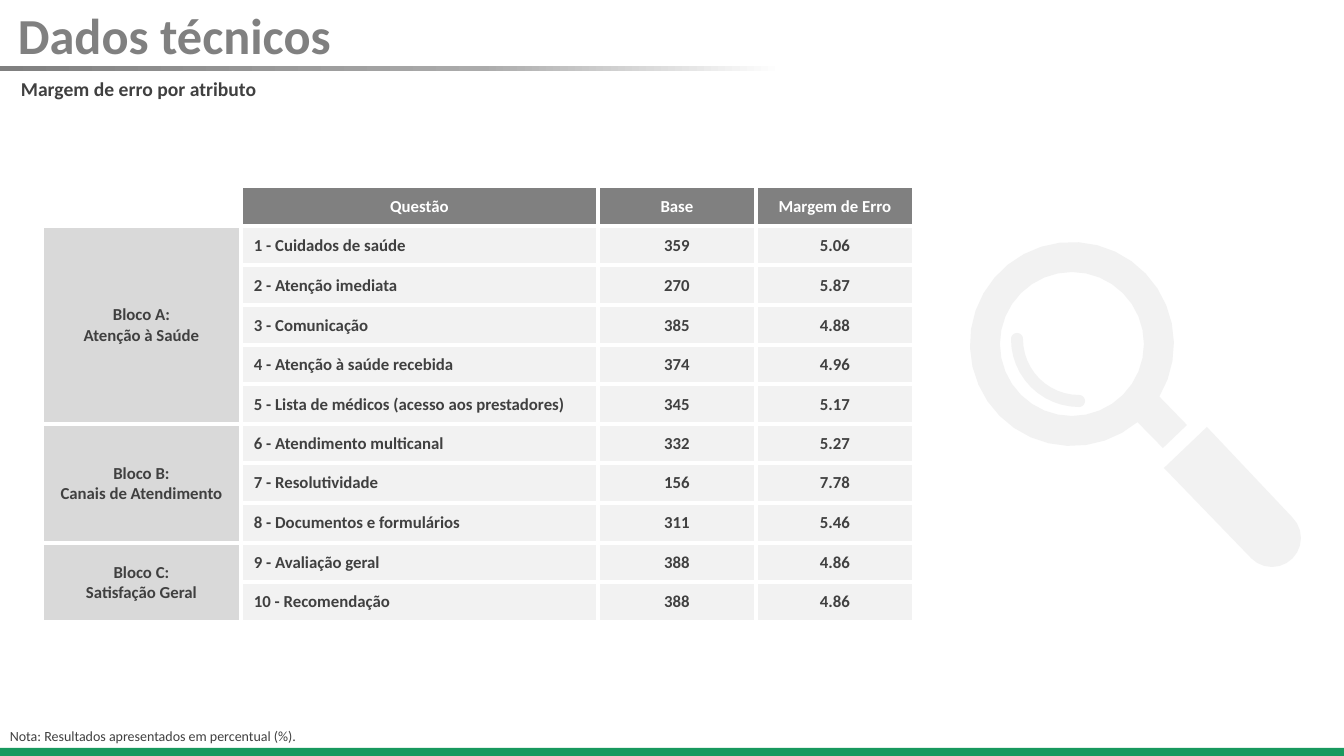
"""Build the slide with the margin of error of each survey attribute."""
from itertools import pairwise
from math import cos, radians, sin
from typing import Any, NamedTuple

from lxml.etree import SubElement
from pptx import Presentation
from pptx.dml.color import RGBColor
from pptx.enum.shapes import MSO_SHAPE
from pptx.enum.text import MSO_ANCHOR, MSO_AUTO_SIZE, PP_ALIGN
from pptx.oxml.ns import qn
from pptx.shapes.autoshape import Shape
from pptx.slide import Slide
from pptx.table import _Cell
from pptx.util import Emu, Pt

EMU_PER_PX = 914400 / 100.8
COLORS = {
    "gray": "808080",
    "silver": "ABABAB",
    "block": "D9D9D9",
    "light": "F2F2F2",
    "dark": "404040",
    "white": "FFFFFF",
    "green": "18995E",
}
Point = tuple[float, float]


class Block(NamedTuple):
    title: str
    subject: str
    rows: list[tuple[str, str, str]]


class Caption(NamedTuple):
    text: str
    frame: tuple[int, int, int, int]
    size: int
    color: str
    bold: bool
    frame_format: dict[str, Any]
    line_spacing: float | None = None


HEADERS = ("Questão", "Base", "Margem de Erro")
BLOCKS = [
    Block("Bloco A:", "Atenção à Saúde", [
        ("1 - Cuidados de saúde", "359", "5.06"),
        ("2 - Atenção imediata", "270", "5.87"),
        ("3 - Comunicação", "385", "4.88"),
        ("4 - Atenção à saúde recebida", "374", "4.96"),
        ("5 - Lista de médicos (acesso aos prestadores)", "345", "5.17"),
    ]),
    Block("Bloco B:", "Canais de Atendimento", [
        ("6 - Atendimento multicanal", "332", "5.27"),
        ("7 - Resolutividade", "156", "7.78"),
        ("8 - Documentos e formulários", "311", "5.46"),
    ]),
    Block("Bloco C:", "Satisfação Geral", [
        ("9 - Avaliação geral", "388", "4.86"),
        ("10 - Recomendação", "388", "4.86"),
    ]),
]
COLUMN_WIDTHS = (199, 357, 158, 158)
TABLE_LEFT, TABLE_TOP, TABLE_HEIGHT = 42, 186, 436
GROWING = {"word_wrap": True, "auto_size": MSO_AUTO_SIZE.SHAPE_TO_FIT_TEXT}
CAPTIONS = [
    Caption("Dados técnicos", (8, 6, 1320, 69), 36, "gray", True, {"word_wrap": True}, 0.9),
    Caption("Margem de erro por atributo", (11, 72, 257, 34), 14, "dark", True,
            {**GROWING, "word_wrap": False}),
    Caption("Nota: Resultados apresentados em percentual (%).", (0, 723, 312, 27), 10, "dark",
            False, GROWING),
]


def px(length: float) -> Emu:
    """Turn px into EMU."""
    return Emu(round(length * EMU_PER_PX))


def rgb(name: str) -> RGBColor:
    """Look up a colour by its name."""
    return RGBColor.from_string(COLORS[name])


def apply(target: Any, values: dict[str, Any]) -> None:
    """Set each named attribute on the target."""
    for name, value in values.items():
        setattr(target, name, value)


def format_span(span: Any, size: int, color: str, bold: bool) -> None:
    """Give a run its font."""
    apply(span.font, {"name": "Calibri", "size": Pt(size), "bold": bold})
    span.font.color.rgb = rgb(color)


def add_bar(page: Slide, frame: tuple[int, int, int, int]) -> Shape:
    """Add a rectangle without outline."""
    bar = page.shapes.add_shape(MSO_SHAPE.RECTANGLE, *map(px, frame))
    bar.shadow.inherit = False
    bar.line.fill.background()
    return bar


def fade(bar: Shape, stops: list[tuple[int, str]]) -> None:
    """Fill a bar with a gradient running from left to right."""
    bar.fill.gradient()
    bar.fill.gradient_angle = 0
    stop_list = bar.element.spPr.find(qn("a:gradFill")).find(qn("a:gsLst"))
    stop_list.clear()
    for percent, color in stops:
        stop = SubElement(stop_list, qn("a:gs"), pos=str(percent * 1000))
        SubElement(stop, qn("a:srgbClr"), val=COLORS[color])


def add_caption(page: Slide, caption: Caption) -> None:
    """Add a text box with one paragraph."""
    box = page.shapes.add_textbox(*map(px, caption.frame))
    apply(box.text_frame, caption.frame_format)
    para = box.text_frame.paragraphs[0]
    para.line_spacing = caption.line_spacing
    span = para.add_run()
    span.text = caption.text
    format_span(span, caption.size, caption.color, caption.bold)


def style_cell(cell: _Cell) -> None:
    """Give a cell narrow margins, no fill and white borders."""
    apply(cell, {"margin_left": px(1), "margin_right": px(1), "margin_top": px(1),
                 "margin_bottom": 0, "vertical_anchor": MSO_ANCHOR.MIDDLE})
    properties = cell._tc.get_or_add_tcPr()
    for side in ("lnL", "lnR", "lnT", "lnB"):
        border = SubElement(properties, qn(f"a:{side}"), w=str(Pt(3)))
        fill = SubElement(border, qn("a:solidFill"))
        SubElement(fill, qn("a:srgbClr"), val=COLORS["white"])
    cell.fill.background()


def write_cell(cell: _Cell, lines: list[str], fill: str, color: str = "dark",
               indent: int = 0) -> None:
    """Fill a cell and write its lines, centred unless indented."""
    cell.fill.solid()
    cell.fill.fore_color.rgb = rgb(fill)
    cell.text = "\n".join(lines)
    for para in cell.text_frame.paragraphs:
        if indent:
            properties = para._p.get_or_add_pPr()
            properties.set("marL", str(px(indent)))
            properties.set("indent", "0")
        else:
            para.alignment = PP_ALIGN.CENTER
        for span in para.runs:
            format_span(span, 12, color, True)


def add_margin_table(page: Slide) -> None:
    """Add the table of questions grouped by block."""
    row_count = 1 + sum(len(block.rows) for block in BLOCKS)
    frame = page.shapes.add_table(row_count, len(COLUMN_WIDTHS), px(TABLE_LEFT), px(TABLE_TOP),
                                  px(sum(COLUMN_WIDTHS)), px(TABLE_HEIGHT))
    table = frame.table
    apply(table, {"first_row": False, "horz_banding": False})
    for column, width in zip(table.columns, COLUMN_WIDTHS):
        column.width = px(width)
    edges = [round(TABLE_HEIGHT * index / row_count) for index in range(row_count + 1)]
    for row, (top, bottom) in zip(table.rows, pairwise(edges)):
        row.height = px(bottom - top)
    for cell in table.iter_cells():
        style_cell(cell)
    for column, header in enumerate(HEADERS, 1):
        write_cell(table.cell(0, column), [header], "gray", "white")
    first = 1
    for block in BLOCKS:
        last = first + len(block.rows) - 1
        table.cell(first, 0).merge(table.cell(last, 0))
        write_cell(table.cell(first, 0), [block.title, block.subject], "block")
        for row, values in enumerate(block.rows, first):
            for column, value in enumerate(values, 1):
                write_cell(table.cell(row, column), [value], "light",
                           indent=12 if column == 1 else 0)
        first = last + 1


def arc(center: Point, radius: float, start: int, end: int, steps: int = 12) -> list[Point]:
    """List points along an arc, in degrees clockwise from the right."""
    angles = [radians(start + (end - start) * step / steps) for step in range(steps + 1)]
    return [(center[0] + radius * cos(angle), center[1] + radius * sin(angle))
            for angle in angles]


def add_outline(page: Slide, *contours: list[Point]) -> None:
    """Add a light freeform made of closed contours."""
    scaled = [[(px(x), px(y)) for x, y in contour] for contour in contours]
    builder = page.shapes.build_freeform(*scaled[0][0], scale=1.0)
    builder.add_line_segments(scaled[0][1:], close=True)
    for contour in scaled[1:]:
        builder.move_to(*contour[0])
        builder.add_line_segments(contour[1:], close=True)
    outline = builder.convert_to_shape()
    outline.shadow.inherit = False
    outline.fill.solid()
    outline.fill.fore_color.rgb = rgb("light")
    outline.line.fill.background()


def add_magnifier(page: Slide) -> None:
    """Add the lens with its neck, the glint and the handle."""
    lens, glint = (1072, 344), (1079, 339)
    add_outline(page, arc(lens, 102, 50, 391, 32) + [(1187, 425), (1163, 448)],
                arc(lens, 72, 360, 0, 32))
    add_outline(page, arc(glint, 68, 180, 90) + arc((1079, 401), 6, 90, -90)
                + arc(glint, 56, 90, 180) + arc((1017, 339), 6, 0, -180))
    add_outline(page, [(1164, 468), (1207, 427)] + arc((1272, 538), 29, -45, 135))


def main() -> None:
    """Build and save the deck."""
    deck = Presentation()
    apply(deck, {"slide_width": px(1344), "slide_height": px(756)})
    page = deck.slides.add_slide(deck.slide_layouts[6])
    fade(add_bar(page, (0, 66, 860, 5)), [(0, "gray"), (56, "silver"), (91, "white")])
    footer = add_bar(page, (0, 748, 1344, 8))
    footer.fill.solid()
    footer.fill.fore_color.rgb = rgb("green")
    add_margin_table(page)
    add_magnifier(page)
    for caption in CAPTIONS:
        add_caption(page, caption)
    deck.save("out.pptx")


if __name__ == "__main__":
    main()
